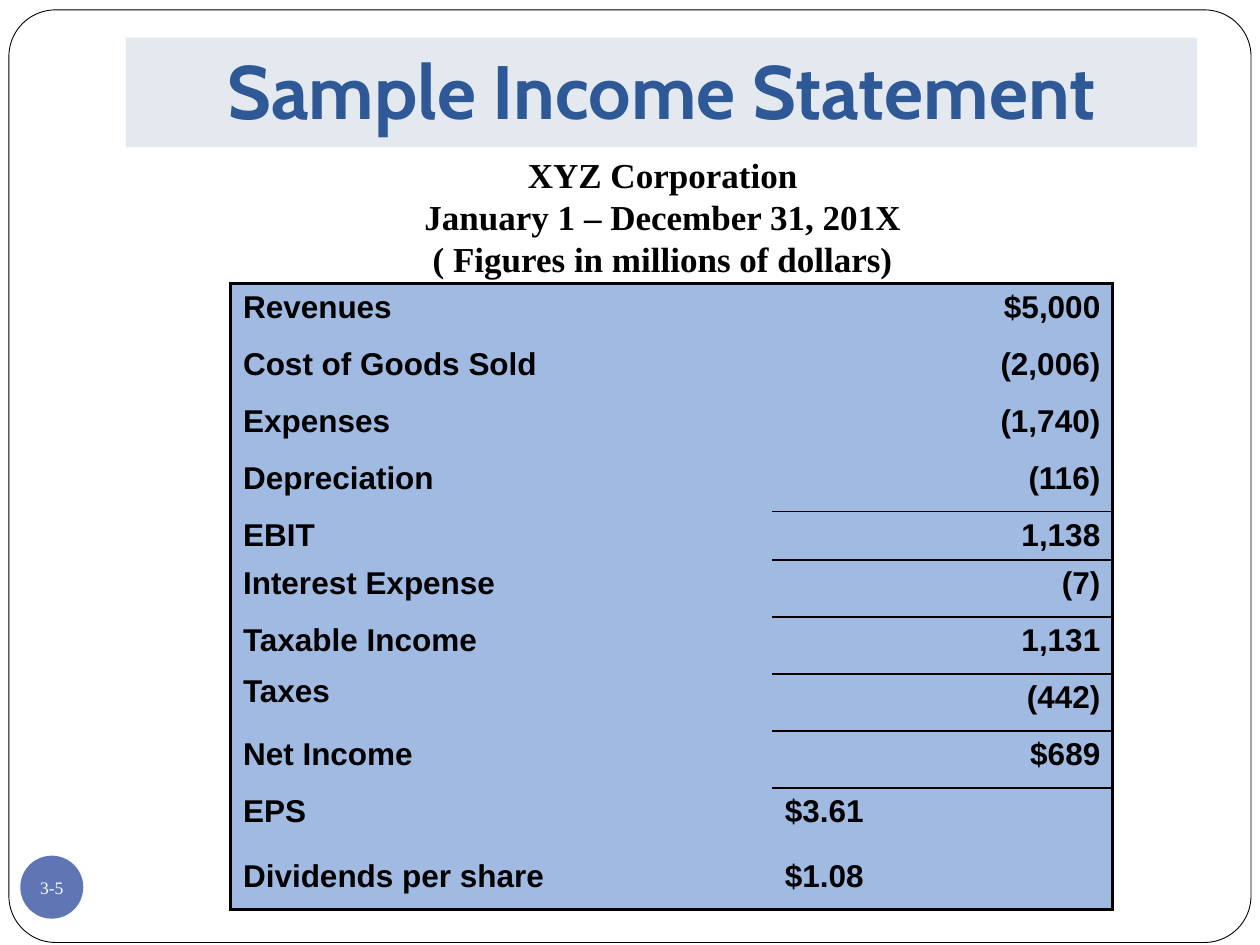
from pptx import Presentation, util as u
from pptx.dml.color import RGBColor
from pptx.enum import shapes, text
from pptx.oxml.ns import qn
from lxml import etree

Cm, Pt = u.Cm, u.Pt
BLACK, WHITE, CELL_BLUE = "000000", "FFFFFF", "A0BAE1"
LEFT, CENTER, RIGHT = text.PP_ALIGN.LEFT, text.PP_ALIGN.CENTER, text.PP_ALIGN.RIGHT
NO_STYLE_NO_GRID = "{2D5ABB26-0587-4C30-8999-92F81FD0307C}"
FRAME_WIDTH, SUBTOTAL_WIDTH = 2.25, 1
ROW_HEIGHT = 1.15

# Label, amount, amount alignment, row height in cm
STATEMENT = [
    ("Revenues", "$5,000", RIGHT, ROW_HEIGHT),
    ("Cost of Goods Sold", "(2,006)", RIGHT, ROW_HEIGHT),
    ("Expenses", "(1,740)", RIGHT, ROW_HEIGHT),
    ("Depreciation", "(116)", RIGHT, ROW_HEIGHT),
    ("EBIT", "1,138", RIGHT, 0.97),
    ("Interest Expense", "(7)", RIGHT, ROW_HEIGHT),
    ("Taxable Income", "1,131", RIGHT, ROW_HEIGHT),
    ("Taxes", "(442)", RIGHT, ROW_HEIGHT),
    ("Net Income", "$689", RIGHT, ROW_HEIGHT),
    ("EPS", "$3.61", LEFT, 1.3),
    ("Dividends per share", "$1.08", LEFT, ROW_HEIGHT),
]
SUBTOTALS = ("EBIT", "Taxable Income", "Net Income")


def color(hex_string):
    return RGBColor.from_string(hex_string)


def write_text(frame, content, size, font="Arial", fill=BLACK, bold=True, align=LEFT):
    """Write one paragraph per line of content."""
    for index, line in enumerate(content.split("\n")):
        paragraph = frame.add_paragraph() if index else frame.paragraphs[0]
        paragraph.alignment = align
        run = paragraph.add_run()
        run.text = line
        run.font.name, run.font.size, run.font.bold = font, Pt(size), bold
        run.font.color.rgb = color(fill)


def set_margins(frame, left, top, right, bottom):
    frame.margin_left, frame.margin_top = Cm(left), Cm(top)
    frame.margin_right, frame.margin_bottom = Cm(right), Cm(bottom)


def add_panel(slide, kind, left, top, width, height, fill, line=None):
    shape = slide.shapes.add_shape(kind, Cm(left), Cm(top), Cm(width), Cm(height))
    shape.shadow.inherit = False
    shape.fill.solid()
    shape.fill.fore_color.rgb = color(fill)
    if line:
        shape.line.color.rgb = color(line)
        shape.line.width = Pt(0.5)
    else:
        shape.line.fill.background()
    return shape


def add_borders(cell, widths):
    """Draw the given sides; the keys must come in the order L, R, T, B."""
    properties = cell._tc.get_or_add_tcPr()
    for side, width in widths.items():
        if width:
            line = etree.SubElement(properties, qn(f"a:ln{side}"), w=str(Pt(width)))
            solid = etree.SubElement(line, qn("a:solidFill"))
            etree.SubElement(solid, qn("a:srgbClr"), val=BLACK)


def add_statement(slide):
    total = sum(row[-1] for row in STATEMENT)
    table = slide.shapes.add_table(
        len(STATEMENT), 2, Cm(4.65), Cm(5.72), Cm(17.78), Cm(total)).table
    table._tbl.tblPr.find(qn("a:tableStyleId")).text = NO_STYLE_NO_GRID
    table.first_row = table.horz_banding = False
    for column, width in zip(table.columns, (10.92, 6.86)):
        column.width = Cm(width)

    last = len(STATEMENT) - 1
    for index, (label, amount, align, height) in enumerate(STATEMENT):
        table.rows[index].height = Cm(height)
        next_label = STATEMENT[index + 1][0] if index < last else None
        for column, (content, side) in enumerate(((label, LEFT), (amount, align))):
            cell = table.cell(index, column)
            above = SUBTOTAL_WIDTH if column and label in SUBTOTALS else 0
            below = SUBTOTAL_WIDTH if column and next_label in SUBTOTALS else 0
            add_borders(cell, {
                "L": 0 if column else FRAME_WIDTH,
                "R": FRAME_WIDTH if column else 0,
                "T": above if index else FRAME_WIDTH,
                "B": below if index < last else FRAME_WIDTH,
            })
            cell.fill.solid()
            cell.fill.fore_color.rgb = color(CELL_BLUE)
            vertical = 0 if content == "Taxes" else 0.13
            set_margins(cell, 0.25, vertical, 0.25, vertical)
            write_text(cell.text_frame, content, 18, align=side)


def main():
    presentation = Presentation()
    presentation.slide_width, presentation.slide_height = Cm(25.4), Cm(19.05)
    slide = presentation.slides.add_slide(presentation.slide_layouts[6])
    kinds = shapes.MSO_SHAPE

    # Rounded page frame
    page = add_panel(slide, kinds.ROUNDED_RECTANGLE, 0.18, 0.2, 25.04, 18.8, WHITE, BLACK)
    page.adjustments[0] = 0.05

    # Slide number
    badge = add_panel(slide, kinds.OVAL, 0.41, 17.25, 1.27, 1.27, "6076B4").text_frame
    set_margins(badge, 0, 0, 0, 0)
    badge.word_wrap = False
    badge.vertical_anchor = text.MSO_ANCHOR.MIDDLE
    write_text(badge, "3-5", 10, "Times New Roman", WHITE, bold=False, align=CENTER)

    # Title
    title = add_panel(slide, kinds.RECTANGLE, 2.54, 0.76, 21.59, 2.21, "E4E9EF").text_frame
    set_margins(title, 0.25, 0.13, 0.25, 0.25)
    title.word_wrap = True
    title.vertical_anchor = text.MSO_ANCHOR.BOTTOM
    write_text(title, "Sample Income Statement", 43.2, "Cabin", "2F5897", align=CENTER)

    # Income statement
    add_statement(slide)

    # Statement heading
    heading = slide.shapes.add_textbox(Cm(5.84), Cm(2.97), Cm(15.04), Cm(2.82)).text_frame
    heading.word_wrap = True
    write_text(
        heading,
        "XYZ Corporation\nJanuary 1 – December 31, 201X\n( Figures in millions of dollars)",
        20, "Times New Roman", align=CENTER)

    presentation.save("out.pptx")


if __name__ == "__main__":
    main()
